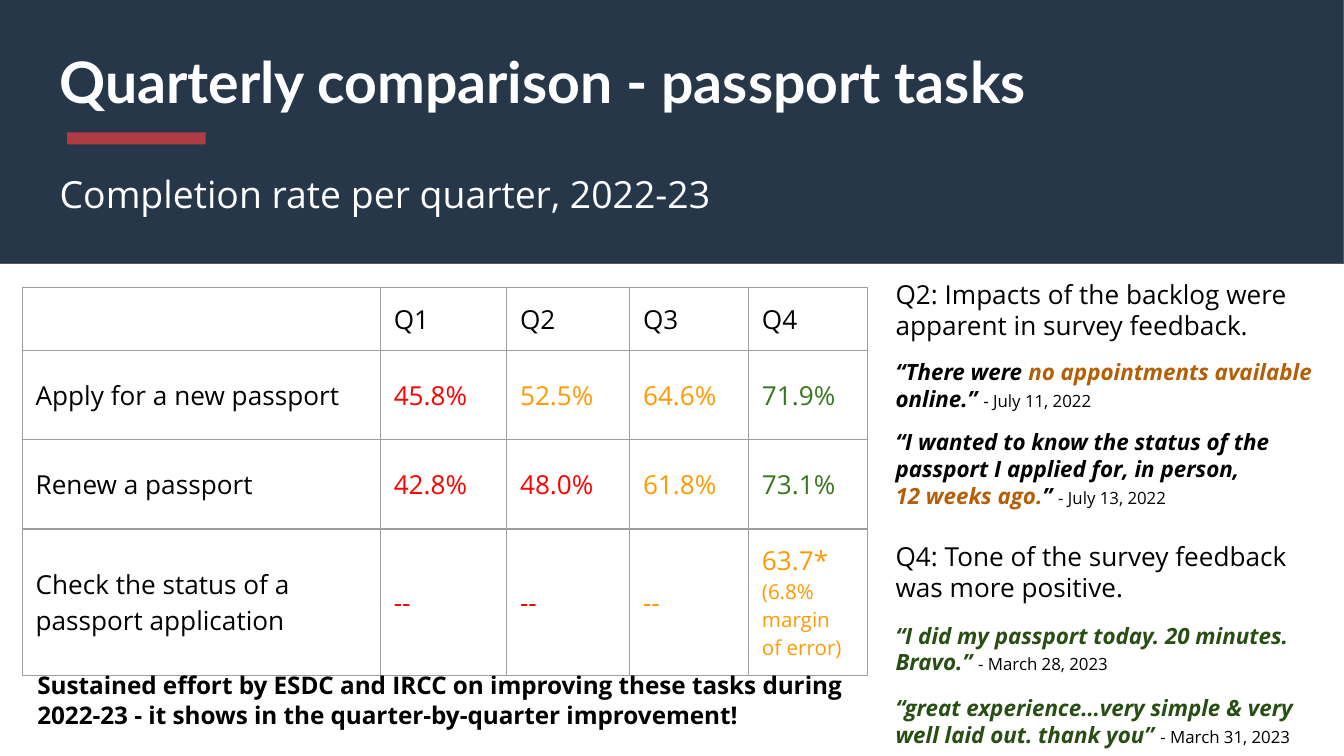
from lxml.etree import SubElement as Sub
from pptx import Presentation
from pptx.dml.color import RGBColor
from pptx.enum.shapes import MSO_SHAPE as Kind
from pptx.enum.text import MSO_ANCHOR as Anchor, MSO_AUTO_SIZE as Fit
from pptx.oxml.ns import qn
from pptx.util import Pt

PX = 4572
PAD = 20 * PX
BLACK, WHITE, NAVY, RED = "000000", "FFFFFF", "26374A", "AF3C43"
BAD, FAIR, GOOD = "FF0000", "FF9900", "38761D"
BROWN, GREEN = "B45F06", "274E13"


def tint(color, code):
    color.rgb = RGBColor.from_string(code)


def put(para, text, size, code, style="", face="Open Sans"):
    run = para.add_run()
    run.text = text
    font = run.font
    font.name, font.size = face, Pt(size)
    font.bold, font.italic = "b" in style, "i" in style
    tint(font.color, code)


deck = Presentation()
deck.slide_width, deck.slide_height = 2000 * PX, 1125 * PX
slide = deck.slides.add_slide(deck.slide_layouts[6])
shapes = slide.shapes

for box, code, edge in [
    ((-10, -2, 2010, 394), NAVY, "595959"),
    ((100, 197, 206, 18), RED, None),
]:
    bar = shapes.add_shape(Kind.RECTANGLE, *[n * PX for n in box])
    bar.shadow.inherit = False
    bar.fill.solid()
    tint(bar.fill.fore_color, code)
    if edge:
        tint(bar.line.color, edge)
        bar.line.width = Pt(0.75)
    else:
        bar.line.fill.background()

rows = [
    [("", BLACK), ("Q1", BLACK), ("Q2", BLACK), ("Q3", BLACK), ("Q4", BLACK)],
    [("Apply for a new passport", BLACK), ("45.8%", BAD), ("52.5%", FAIR),
     ("64.6%", FAIR), ("71.9%", GOOD)],
    [("Renew a passport", BLACK), ("42.8%", BAD), ("48.0%", BAD),
     ("61.8%", FAIR), ("73.1%", GOOD)],
    [("Check the status of a passport application", BLACK), ("--", BAD),
     ("--", BAD), ("--", FAIR), ("63.7* ", FAIR)],
]
wide, high = [533, 188, 183, 177, 177], [86, 133, 133, 133]
table = shapes.add_table(4, 5, 33 * PX, 428 * PX, sum(wide) * PX, sum(high) * PX).table
table.first_row = table.horz_banding = False
for col, width in zip(table.columns, wide):
    col.width = width * PX
for r, row in enumerate(rows):
    table.rows[r].height = high[r] * PX
    for c, (text, code) in enumerate(row):
        cell = table.cell(r, c)
        cell.margin_left = cell.margin_right = PAD
        cell.margin_top = cell.margin_bottom = PAD
        if r:
            cell.vertical_anchor = Anchor.MIDDLE
        props = cell._tc.get_or_add_tcPr()
        for side in "LRTB":
            line = Sub(props, qn("a:ln" + side), w=str(Pt(0.75)))
            Sub(Sub(line, qn("a:solidFill")), qn("a:srgbClr"), val="9E9E9E")
        cell.fill.background()
        para = cell.text_frame.paragraphs[0]
        para.font.size = Pt(14)
        if text:
            put(para, text, 14, code)
        if text.startswith("63.7"):
            put(para, "(6.8% margin of error)", 11, code)

title = [[("Quarterly comparison - passport tasks", 30.6, WHITE, "b", "Lato")]]
lede = [[("Completion rate per quarter, 2022-23", 20, WHITE)]]
note = [[("Sustained effort by ESDC and IRCC on improving these tasks during "
          "2022-23 - it shows in the quarter-by-quarter improvement!", 13, BLACK, "b")]]
late = [
    [("Q4: Tone of the survey feedback was more positive.", 14, BLACK)],
    [("“I did my passport today. 20 minutes. Bravo.” ", 12, GREEN, "bi"),
     ("- March 28, 2023", 9, BLACK)],
    [("“great experience…very simple & very well laid out. thank you” ", 12, GREEN, "bi"),
     ("- March 31, 2023", 9, BLACK)],
]
early = [
    [("Q2: Impacts of the backlog were apparent in survey feedback.", 14, BLACK)],
    [("“There were ", 12, BLACK, "bi"),
     ("no appointments available", 12, BROWN, "bi"),
     (" online.” ", 12, BLACK, "bi"),
     ("- July 11, 2022", 9, BLACK)],
    [("“I wanted to know the status of the passport I applied for, in person, ",
      12, BLACK, "bi"),
     None,
     ("12 weeks ago.", 12, BROWN, "bi"),
     ("” ", 12, BLACK, "bi"),
     ("- July 13, 2022", 9, BLACK)],
]

for box, paras, gap, fit in [
    ((69, 49, 1534, 210), title, 0, Fit.NONE),
    ((69, 235, 1542, 100), lede, 0, Fit.NONE),
    ((36, 978, 1252, 128), note, 0, Fit.SHAPE_TO_FIT_TEXT),
    ((1313, 784, 687, 354), late, 10, Fit.SHAPE_TO_FIT_TEXT),
    ((1313, 394, 687, 390), early, 9, Fit.SHAPE_TO_FIT_TEXT),
]:
    frame = shapes.add_textbox(*[n * PX for n in box]).text_frame
    frame.word_wrap = True
    frame.auto_size = fit
    frame.margin_left = frame.margin_right = PAD
    frame.margin_top = frame.margin_bottom = PAD
    for i, runs in enumerate(paras):
        para = frame.add_paragraph() if i else frame.paragraphs[0]
        para.line_spacing = 1.0
        if i:
            para.space_before = Pt(gap)
        for run in runs:
            if run:
                put(para, *run)
            else:
                para.add_line_break()

deck.save("out.pptx")
